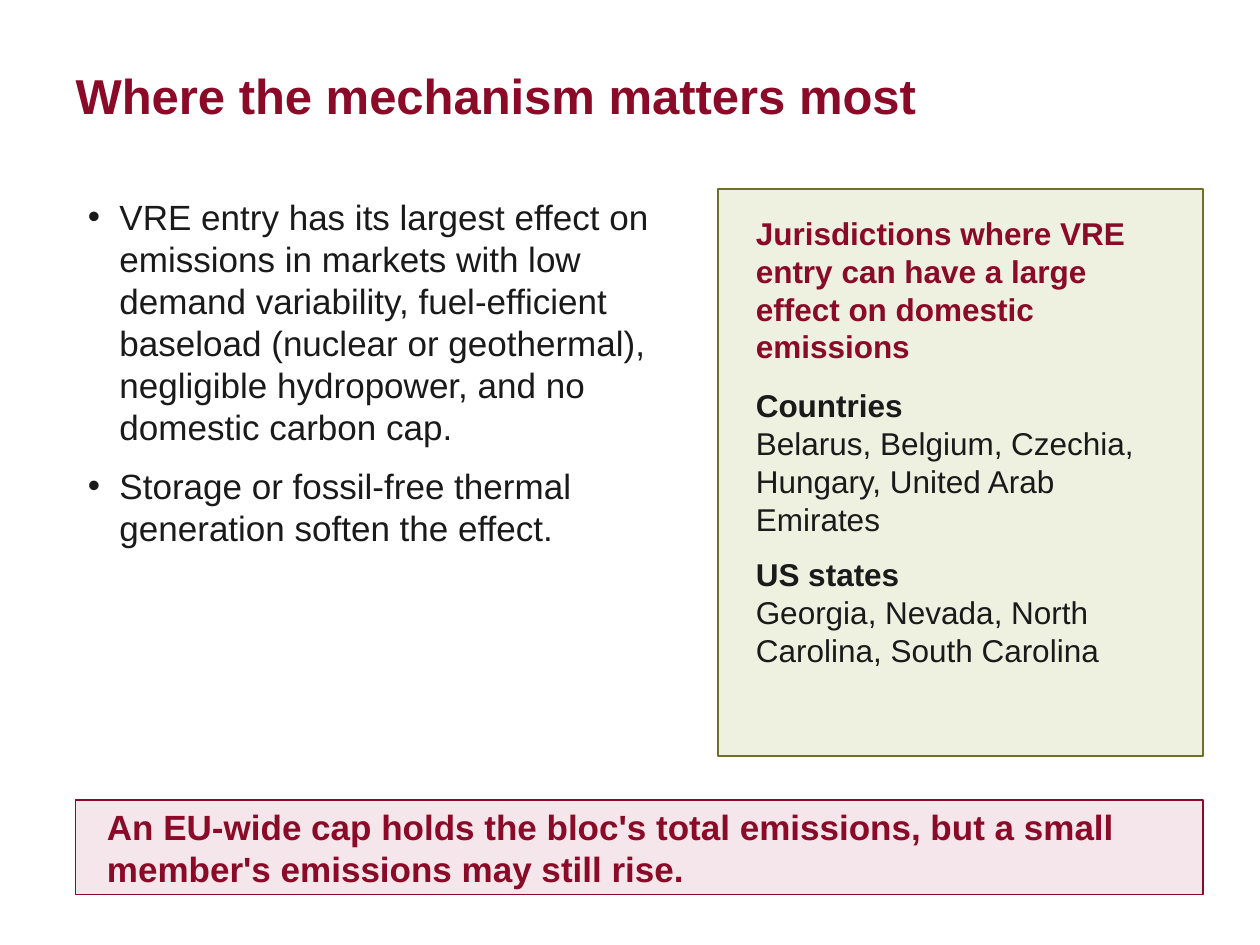
from lxml.etree import SubElement
from pptx import Presentation
from pptx.dml.color import RGBColor
from pptx.enum.shapes import MSO_SHAPE
from pptx.enum.text import MSO_ANCHOR, PP_ALIGN
from pptx.oxml.ns import qn
from pptx.util import Inches, Pt

COLORS = {"red": "8A0A27", "ink": "1A1A1A", "olive": "6E7022",
          "sage": "EEF0E0", "pink": "F4E6EA"}
FONT = "Arial"

TITLE = "Where the mechanism matters most"
POINTS = [
    "VRE entry has its largest effect on emissions in markets with low demand "
    "variability, fuel-efficient baseload (nuclear or geothermal), negligible "
    "hydropower, and no domestic carbon cap.",
    "Storage or fossil-free thermal generation soften the effect.",
]
HEADING = "Jurisdictions where VRE entry can have a large effect on domestic emissions"
GROUPS = [
    ("Countries", "Belarus, Belgium, Czechia, Hungary, United Arab Emirates"),
    ("US states", "Georgia, Nevada, North Carolina, South Carolina"),
]
TAKEAWAY = ("An EU-wide cap holds the bloc's total emissions, "
            "but a small member's emissions may still rise.")

LEFT, WIDTH = 0.6, 8.95
TOP = 1.5
PANEL_W, PANEL_H = 3.85, 4.5
PANEL_X = LEFT + WIDTH - PANEL_W
BAND_Y, BAND_H = 6.35, 0.75
PAD = 0.15


def rgb(name):
    return RGBColor.from_string(COLORS[name])


def add_panel(slide, box, fill, line, weight):
    panel = slide.shapes.add_shape(MSO_SHAPE.RECTANGLE, *map(Inches, box))
    panel.shadow.inherit = False
    panel.fill.solid()
    panel.fill.fore_color.rgb = rgb(fill)
    panel.line.color.rgb = rgb(line)
    panel.line.width = Pt(weight)


def add_bullet(para):
    props = para._p.get_or_add_pPr()
    props.set("marL", str(Inches(0.25)))
    props.set("indent", str(-Inches(0.25)))
    SubElement(props, qn("a:buFont")).set("typeface", FONT)
    SubElement(props, qn("a:buChar")).set("char", "•")


def write(frame, items, size, bullets=False):
    """Fill a frame with (text, color, bold, space after) items."""
    frame.word_wrap = True
    for i, (text, color, bold, after) in enumerate(items):
        para = frame.add_paragraph() if i else frame.paragraphs[0]
        para.text = text
        if bullets:
            add_bullet(para)
        para.alignment = PP_ALIGN.LEFT
        para.space_after = Pt(after)
        font = para.font
        font.name, font.size, font.bold = FONT, Pt(size), bold
        font.color.rgb = rgb(color)


def add_text(slide, box, items, size, bullets=False):
    frame = slide.shapes.add_textbox(*map(Inches, box)).text_frame
    write(frame, items, size, bullets)
    return frame


def main():
    deck = Presentation()
    deck.slide_width, deck.slide_height = Inches(10), Inches(7.5)
    slide = deck.slides.add_slide(deck.slide_layouts[5])

    title = slide.shapes.title
    title.left, title.top = Inches(LEFT), Inches(0.3)
    title.width, title.height = Inches(WIDTH), Inches(0.9)
    frame = title.text_frame
    frame.margin_left = frame.margin_right = 0
    frame.margin_top = frame.margin_bottom = 0
    frame.vertical_anchor = MSO_ANCHOR.MIDDLE
    write(frame, [(TITLE, "red", True, 0)], 28)

    add_text(slide, (LEFT, TOP, 5, 4.3),
             [(point, "ink", False, 10) for point in POINTS], 20, bullets=True)

    add_panel(slide, (PANEL_X, TOP, PANEL_W, PANEL_H), "sage", "olive", 1.25)
    lines = [(HEADING, "red", True, 12)]
    for name, places in GROUPS:
        lines += [(name, "ink", True, 0), (places, "ink", False, 10)]
    add_text(slide, (PANEL_X + 0.2, TOP + PAD, PANEL_W - 0.4, PANEL_H - 2 * PAD),
             lines, 18)

    add_panel(slide, (LEFT, BAND_Y, WIDTH, BAND_H), "pink", "red", 1)
    band = add_text(slide, (LEFT + PAD, BAND_Y, WIDTH - 2 * PAD, BAND_H),
                    [(TAKEAWAY, "red", True, 0)], 20)
    band.vertical_anchor = MSO_ANCHOR.MIDDLE

    deck.save("out.pptx")


if __name__ == "__main__":
    main()
